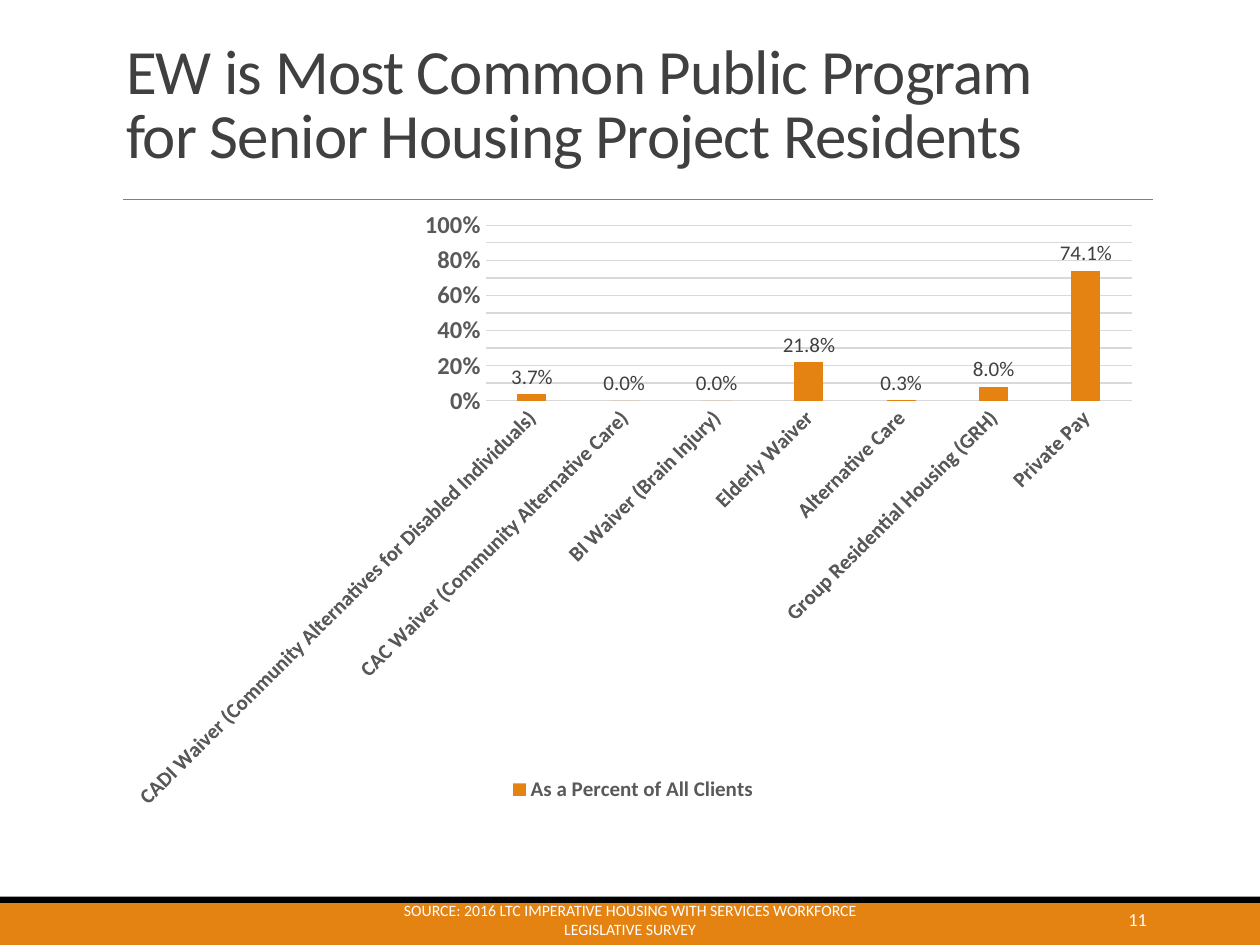
import copy
import pptx
import pptx.chart.data
import pptx.dml.color
import pptx.enum.chart
import pptx.enum.shapes
import pptx.enum.text
import pptx.oxml
import pptx.util
from dataclasses import dataclass

Pt = pptx.util.Pt
Anchor = pptx.enum.text.MSO_ANCHOR
Align = pptx.enum.text.PP_ALIGN


@dataclass
class Theme:
    face: str = "Calibri"
    accent: str = "E48312"
    black: str = "000000"
    white: str = "FFFFFF"
    dark: str = "404040"
    gray: str = "595959"
    rule: str = "808080"
    grid: str = "D9D9D9"
    title: float = 36
    scale: float = 14
    label: float = 12
    page: float = 10.5
    note: float = 9
    base: float = 10


theme = Theme()


def color(code):
    return pptx.dml.color.RGBColor.from_string(code)


def style(font, size, code, bold=False):
    font.name = theme.face
    font.size = Pt(size)
    font.bold = bold
    font.color.rgb = color(code)


def stroke(line, code, width):
    line.color.rgb = color(code)
    line.width = Pt(width)


def bar(slide, box, code):
    shape = slide.shapes.add_shape(
        pptx.enum.shapes.MSO_SHAPE.RECTANGLE, *map(Pt, box))
    shape.shadow.inherit = False
    shape.fill.solid()
    shape.fill.fore_color.rgb = color(code)
    shape.line.fill.background()


def label(slide, box, text, size, align):
    frame = slide.shapes.add_textbox(*map(Pt, box)).text_frame
    frame.word_wrap = True
    frame.vertical_anchor = Anchor.MIDDLE
    para = frame.paragraphs[0]
    para.text = text
    para.alignment = align
    style(para.font, size, theme.white)


def header(slide, box, text):
    left, top, width, height = box
    title = slide.shapes.title
    title.left, title.top, title.width, title.height = map(Pt, box)
    frame = title.text_frame
    frame.word_wrap = True
    frame.auto_size = pptx.enum.text.MSO_AUTO_SIZE.NONE
    frame.vertical_anchor = Anchor.BOTTOM
    para = frame.paragraphs[0]
    para.text = text
    para.alignment = Align.LEFT
    para.line_spacing = 0.85
    style(para.font, theme.title, theme.dark)
    para.runs[0].font._element.set("spc", "-50")

    base = top + height + 12.25
    line = slide.shapes.add_connector(
        pptx.enum.shapes.MSO_CONNECTOR.STRAIGHT,
        Pt(left + 5.75), Pt(base), Pt(left + 594), Pt(base))
    stroke(line.line, theme.rule, 0.5)
    line._element.spPr.append(pptx.oxml.parse_xml(
        '<a:effectLst xmlns:a='
        '"http://schemas.openxmlformats.org/drawingml/2006/main"/>'))


def graph(slide, box, name, rows):
    enum = pptx.enum.chart
    data = pptx.chart.data.CategoryChartData(number_format="0.0%")
    data.categories = [cat for cat, value in rows]
    data.add_series(name, [value for cat, value in rows])
    chart = slide.shapes.add_chart(
        enum.XL_CHART_TYPE.COLUMN_CLUSTERED, *map(Pt, box), data).chart
    style(chart.font, theme.base, theme.black)
    chart.has_title = False
    chart.has_legend = True
    chart.legend.position = enum.XL_LEGEND_POSITION.BOTTOM
    chart.legend.include_in_layout = False
    style(chart.legend.font, theme.label, theme.gray, True)

    cats, vals = chart.category_axis, chart.value_axis
    for axis, size in ((cats, theme.label), (vals, theme.scale)):
        axis.major_tick_mark = enum.XL_TICK_MARK.NONE
        axis.minor_tick_mark = enum.XL_TICK_MARK.NONE
        style(axis.tick_labels.font, size, theme.gray, True)
    stroke(cats.format.line, theme.grid, 0.75)
    cats._element.txPr.bodyPr.set("rot", "-2700000")

    vals.minimum_scale, vals.maximum_scale = 0, 1
    vals.major_unit, vals.minor_unit = 0.2, 0.1
    vals.has_major_gridlines = vals.has_minor_gridlines = True
    stroke(vals.major_gridlines.format.line, theme.grid, 0.75)
    major, minor = vals._element.xpath("c:majorGridlines | c:minorGridlines")
    minor.append(copy.deepcopy(major[0]))
    vals.format.line.fill.background()
    vals.tick_labels.number_format = "0%"
    vals.tick_labels.number_format_is_linked = False

    plot = chart.plots[0]
    plot.vary_by_categories = False
    plot.gap_width, plot.overlap = 219, -27
    series = plot.series[0]
    series.format.fill.solid()
    series.format.fill.fore_color.rgb = color(theme.accent)
    tags = series.data_labels
    tags.show_value = True
    tags.number_format = "0.0%"
    tags.number_format_is_linked = False
    tags.position = enum.XL_LABEL_POSITION.OUTSIDE_END
    style(tags.font, theme.label, theme.dark)


def footer(slide, box, text, page):
    left, top, width, height = box
    bar(slide, box, theme.accent)
    bar(slide, (left, top - 1, width, 3.6), theme.black)
    label(slide, (left + 584.6, top, 77.8, 24), page, theme.page, Align.RIGHT)
    label(slide, (left + 217.4, top, 285.2, 24), text, theme.note,
          Align.CENTER)


def main():
    deck = pptx.Presentation()
    deck.slide_width, deck.slide_height = Pt(720), Pt(540)
    slide = deck.slides.add_slide(deck.slide_layouts[5])
    header(slide, (64.8, 22.4, 553, 79.2),
           "EW is Most Common Public Program for Senior Housing "
           "Project Residents")
    graph(slide, (64.8, 120.2, 594, 342), "As a Percent of All Clients", [
        ("CADI Waiver (Community Alternatives for Disabled Individuals)",
         0.037),
        ("CAC Waiver (Community Alternative Care)", 0),
        ("BI Waiver (Brain Injury)", 0),
        ("Elderly Waiver", 0.218),
        ("Alternative Care", 0.003),
        ("Group Residential Housing (GRH)", 0.08),
        ("Private Pay", 0.741),
    ])
    footer(slide, (0, 513.4, 720, 26.6),
           "SOURCE: 2016 LTC IMPERATIVE HOUSING WITH SERVICES WORKFORCE "
           "LEGISLATIVE SURVEY", "11")
    deck.save("out.pptx")


if __name__ == "__main__":
    main()
